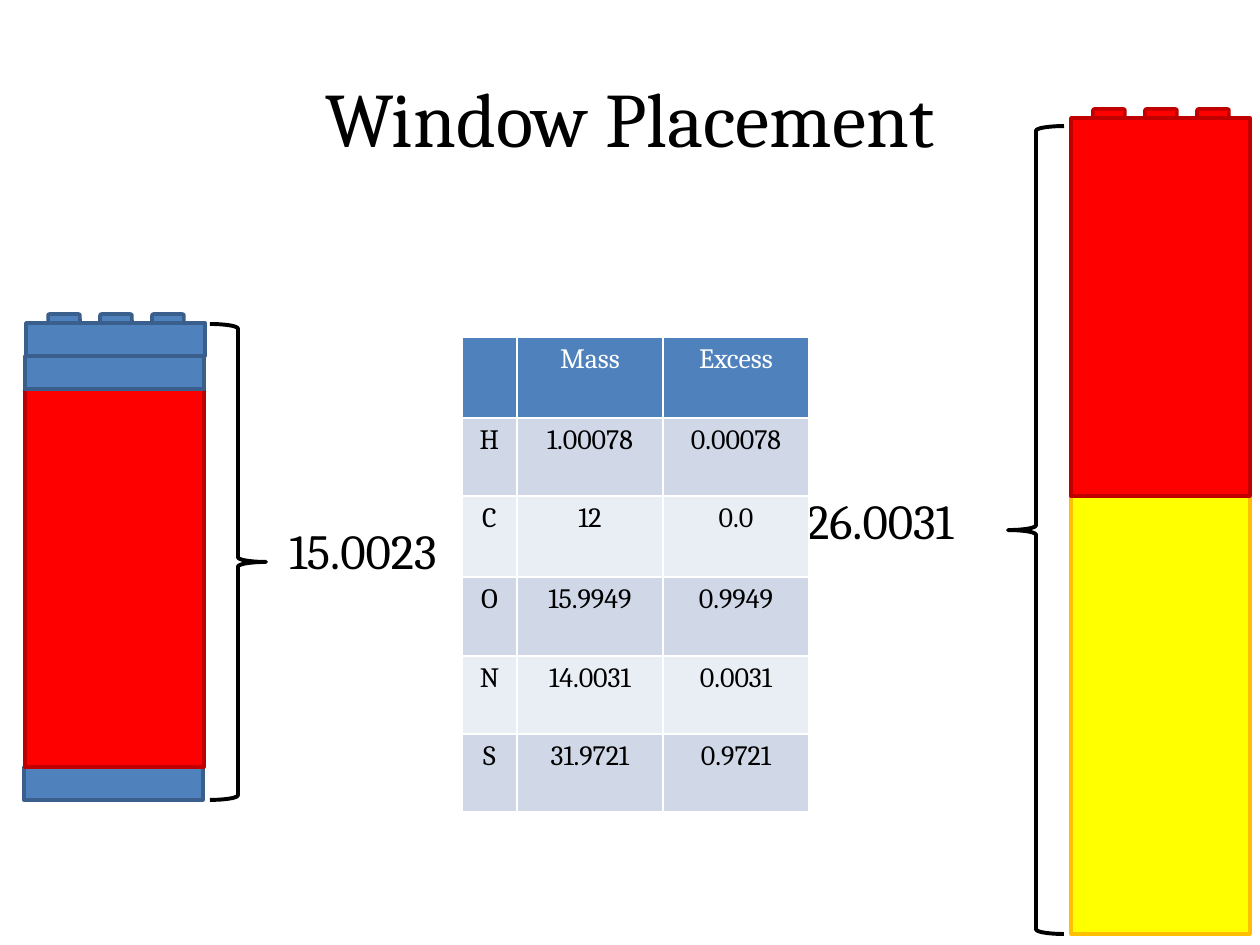
"""Build the Window Placement slide with brick stacks and a mass table."""
from pptx import Presentation
from pptx.dml.color import RGBColor
from pptx.enum.shapes import MSO_SHAPE
from pptx.enum.text import MSO_ANCHOR, PP_ALIGN
from pptx.util import Pt

RECT = MSO_SHAPE.RECTANGLE
ROUND = MSO_SHAPE.ROUNDED_RECTANGLE
BRACE = MSO_SHAPE.RIGHT_BRACE
MID = MSO_ANCHOR.MIDDLE
TOP = MSO_ANCHOR.TOP
LEFT = PP_ALIGN.LEFT
CENTER = PP_ALIGN.CENTER
PX = 914400 // 126
BLUE, RED, YELLOW = ("4F81BD", "3A5F8C"), ("FF0000", "C00000"), ("FFFF00", "FFC000")


def color(code):
    return RGBColor.from_string(code)


def draw(kind, box, fill, line, width):
    shape = slide.shapes.add_shape(kind, *[n * PX for n in box])
    shape.shadow.inherit = False
    if fill:
        shape.fill.solid()
        shape.fill.fore_color.rgb = color(fill)
    else:
        shape.fill.background()
    shape.line.color.rgb = color(line)
    shape.line.width = Pt(width)
    return shape


deck = Presentation()
deck.slide_width = 1260 * PX
deck.slide_height = 945 * PX
slide = deck.slides.add_slide(deck.slide_layouts[6])

bricks = [
    (1071, 493, 441, YELLOW, 0),
    (24, 767, 33, BLUE, 3),
    (25, 389, 378, RED, 3),
    (25, 356, 33, BLUE, 3),
    (26, 323, 33, BLUE, 3),
    (1071, 118, 378, RED, 3),
]
for x, y, high, (fill, line), studs in bricks:
    draw(RECT, (x, y, 179, high), fill, line, 2)
    for i in range(studs):
        draw(ROUND, (x + 22 + 52 * i, y - 9, 32, 9), fill, line, 2)

draw(BRACE, (210, 324, 56, 476), None, "000000", 2.25)
brace = draw(BRACE, (1008, 126, 56, 808), None, "000000", 2.25)
brace.rotation = 180

labels = [
    ("Window Placement", (63, 38, 1134, 157), 44, CENTER, MID, True),
    ("15.0023", (262, 514, 202, 72), 28, CENTER, TOP, False),
    ("26.0031", (794, 484, 203, 72), 28, LEFT, TOP, False),
]
for text, box, size, align, anchor, wrap in labels:
    frame = slide.shapes.add_textbox(*[n * PX for n in box]).text_frame
    frame.word_wrap = wrap
    frame.vertical_anchor = anchor
    para = frame.paragraphs[0]
    para.text = text
    para.alignment = align
    para.font.name = "Cambria"
    para.font.size = Pt(size)
    para.font.color.rgb = color("000000")

rows = [
    ("", "Mass", "Excess"),
    ("H", "1.00078", "0.00078"),
    ("C", "12", "0.0"),
    ("O", "15.9949", "0.9949"),
    ("N", "14.0031", "0.0031"),
    ("S", "31.9721", "0.9721"),
]
table = slide.shapes.add_table(6, 3, 462 * PX, 337 * PX, 347 * PX, 475 * PX).table
for col, wide in zip(table.columns, (55, 146, 146)):
    col.width = wide * PX
for row, high in zip(table.rows, (81, 78, 81, 79, 78, 78)):
    row.height = high * PX
for r, words in enumerate(rows):
    band = "D0D8E8" if r % 2 else "E9EDF4"
    for c, word in enumerate(words):
        cell = table.cell(r, c)
        cell.fill.solid()
        cell.fill.fore_color.rgb = color(band if r else BLUE[0])
        para = cell.text_frame.paragraphs[0]
        para.text = word
        para.alignment = CENTER
        para.font.name = "Cambria"
        para.font.size = Pt(16)
        para.font.bold = False
        para.font.color.rgb = color("000000" if r else "FFFFFF")

deck.save("out.pptx")
